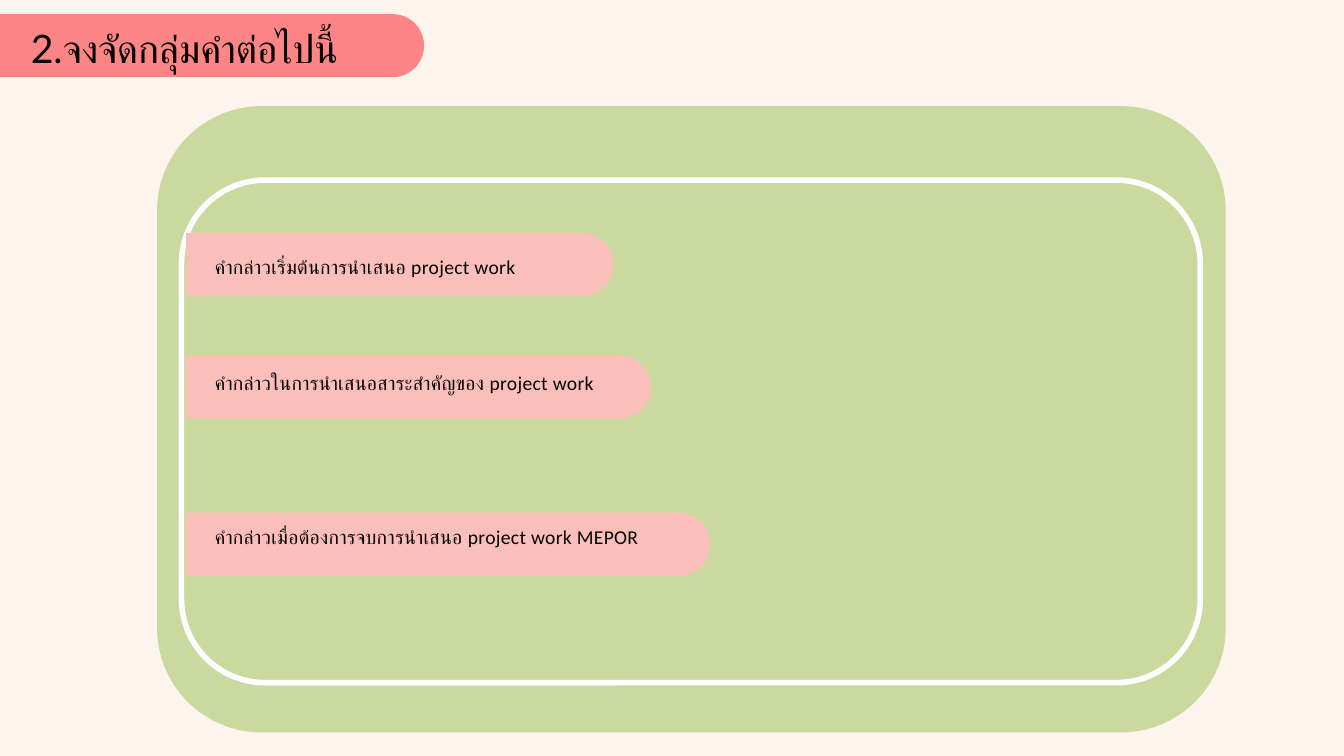
"""Build a Thai exercise slide on grouping phrases."""
from pptx import Presentation
from pptx import util as u
from pptx.dml.color import RGBColor
from pptx.enum import shapes

CREAM, CORAL, PINK = "FDF4ED", "FE8586", "FABFBB"
GREEN, WHITE, INK = "CAD99E", "FFFFFF", "040301"
TAB_HEIGHT = 33.8
TABS_LEFT = 99.7


def color(value):
    return RGBColor.from_string(value)


def add_text(p, content, font="Calibri", size=10.5, before=7.5, spacing=1.0, tracking=None):
    p.line_spacing = spacing
    p.space_before = u.Pt(before)
    r = p.add_run()
    r.text = content
    r.font.name = font
    r.font.size = u.Pt(size)
    r.font.color.rgb = color(INK)
    if tracking:
        r.font._element.set("spc", str(round(tracking * 100)))


class Deck:
    def __init__(self, width, height, background):
        self.prs = Presentation()
        self.prs.slide_width = u.Pt(width)
        self.prs.slide_height = u.Pt(height)
        self.s = self.prs.slides.add_slide(self.prs.slide_layouts[6])
        self.s.background.fill.solid()
        self.s.background.fill.fore_color.rgb = color(background)

    def shape(self, kind, x, y, w, h, fill=None, line=None, weight=3):
        sp = self.s.shapes.add_shape(kind, u.Pt(x), u.Pt(y), u.Pt(w), u.Pt(h))
        sp.shadow.inherit = False
        if fill:
            sp.fill.solid()
            sp.fill.fore_color.rgb = color(fill)
        else:
            sp.fill.background()
        if line:
            sp.line.color.rgb = color(line)
            sp.line.width = u.Pt(weight)
        else:
            sp.line.fill.background()
        return sp

    def panel(self, x, y, w, h, **style):
        return self.shape(shapes.MSO_SHAPE.ROUNDED_RECTANGLE, x, y, w, h, **style)

    def tab(self, x, y, length, fill):
        shift = (length - TAB_HEIGHT) / 2
        sp = self.shape(shapes.MSO_SHAPE.ROUND_2_SAME_RECTANGLE,
                        x + shift, y - shift, TAB_HEIGHT, length, fill=fill)
        sp.adjustments[0] = 0.5
        sp.rotation = 90
        return sp

    def textbox(self, x, y, w, h, lines, **style):
        tf = self.s.shapes.add_textbox(u.Pt(x), u.Pt(y), u.Pt(w), u.Pt(h)).text_frame
        tf.word_wrap = True
        for i, (content, before) in enumerate(lines):
            p = tf.add_paragraph() if i else tf.paragraphs[0]
            add_text(p, content, before=before, **style)


def main():
    deck = Deck(720, 405, CREAM)
    deck.tab(-1.8, 7.6, 229, CORAL)
    deck.panel(84.2, 56.9, 572.4, 335.5, fill=GREEN)
    deck.panel(97.2, 96.5, 545.8, 269.3, line=WHITE)
    deck.textbox(9.4, 12.2, 217.4, 29.5, [("2.จงจัดกลุ่มคำต่อไปนี้", 7.5)],
                 font="Lato", size=21, spacing=0.9)
    for top, length in ((124.9, 229), (190.4, 249.1), (274.7, 280.8)):
        deck.tab(TABS_LEFT, top, length, PINK)
    deck.textbox(108, 132.5, 427.7, 246.2, [
        ("คำกล่าวเริ่มต้นการนำเสนอ project work", 7.5),
        ("คำกล่าวในการนำเสนอสาระสำคัญของ project work", 49),
        ("คำกล่าวเมื่อต้องการจบการนำเสนอ project work MEPOR", 69.3),
    ], spacing=1.05, tracking=0.2)
    deck.prs.save("out.pptx")


if __name__ == "__main__":
    main()
